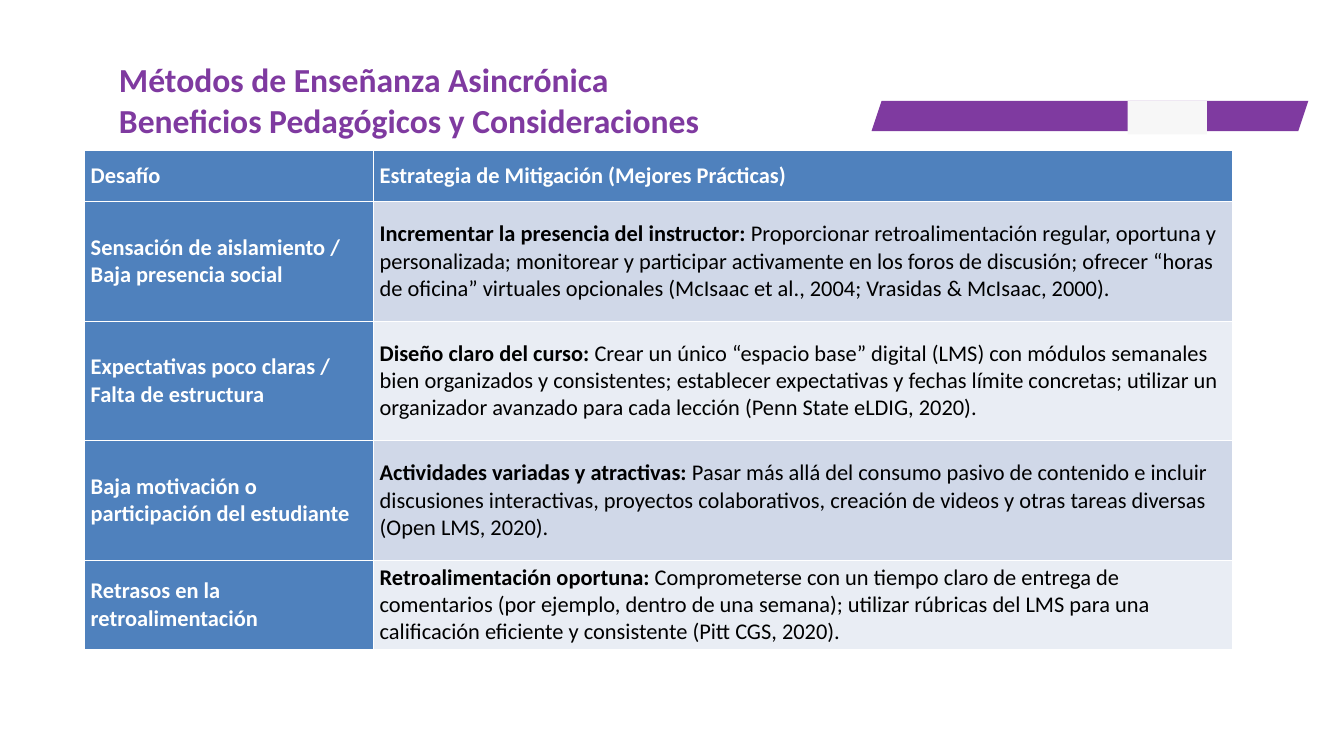
"""Build a slide with a table of asynchronous teaching challenges and mitigation strategies."""
from pptx import Presentation
from pptx.dml.color import RGBColor
from pptx.enum.shapes import MSO_SHAPE
from pptx.enum.text import MSO_ANCHOR, MSO_AUTO_SIZE, PP_ALIGN
from pptx.util import Inches, Pt

RECTANGLE = MSO_SHAPE.RECTANGLE
TOP, MIDDLE = MSO_ANCHOR.TOP, MSO_ANCHOR.MIDDLE
NO_FIT = MSO_AUTO_SIZE.NONE
LEFT = PP_ALIGN.LEFT

PURPLE = RGBColor(0x7F, 0x3A, 0xA0)
LIGHT_GRAY = RGBColor(0xF7, 0xF7, 0xF7)
BLUE = RGBColor(0x4F, 0x81, 0xBD)
BANDS = (RGBColor(0xD0, 0xD8, 0xE8), RGBColor(0xE9, 0xED, 0xF4))
WHITE = RGBColor(0xFF, 0xFF, 0xFF)
BLACK = RGBColor(0, 0, 0)
FONT = "Calibri"

TITLE = "Métodos de Enseñanza Asincrónica\vBeneficios Pedagógicos y Consideraciones"
HEADERS = ("Desafío", "Estrategia de Mitigación (Mejores Prácticas)")
CHALLENGES = [
    ("Sensación de aislamiento / Baja presencia social",
     "Incrementar la presencia del instructor:",
     " Proporcionar retroalimentación regular, oportuna y personalizada; monitorear y participar "
     "activamente en los foros de discusión; ofrecer “horas de oficina” virtuales opcionales "
     "(McIsaac et al., 2004; Vrasidas & McIsaac, 2000)."),
    ("Expectativas poco claras / Falta de estructura",
     "Diseño claro del curso:",
     " Crear un único “espacio base” digital (LMS) con módulos semanales bien organizados y "
     "consistentes; establecer expectativas y fechas límite concretas; utilizar un organizador "
     "avanzado para cada lección (Penn State eLDIG, 2020)."),
    ("Baja motivación o participación del estudiante",
     "Actividades variadas y atractivas:",
     " Pasar más allá del consumo pasivo de contenido e incluir discusiones interactivas, "
     "proyectos colaborativos, creación de videos y otras tareas diversas (Open LMS, 2020)."),
    ("Retrasos en la retroalimentación",
     "Retroalimentación oportuna:",
     " Comprometerse con un tiempo claro de entrega de comentarios (por ejemplo, dentro de una "
     "semana); utilizar rúbricas del LMS para una calificación eficiente y consistente "
     "(Pitt CGS, 2020)."),
]
COL_WIDTHS = (4.3, 12.79)
ROW_HEIGHTS = (0.76, 1.78, 1.78, 1.78, 1.27)
BAND_POINTS = [(13.12, 1.5), (19.47, 1.5), (19.32, 1.95), (12.97, 1.95)]


def set_font(font, size, color, bold=None):
    font.name, font.size, font.bold = FONT, Pt(size), bold
    font.color.rgb = color


def paint(sp, color):
    sp.shadow.inherit = False
    sp.fill.solid()
    sp.fill.fore_color.rgb = color
    sp.line.fill.background()


def fill_cell(cell, fill, color, *texts):
    cell.fill.solid()
    cell.fill.fore_color.rgb = fill
    cell.vertical_anchor = MIDDLE
    p = cell.text_frame.paragraphs[0]
    set_font(p.font, 24, color)
    for i, text in enumerate(texts):
        r = p.add_run()
        r.text = text
        r.font.bold = i == 0


def add_ribbon(s):
    points = [(Inches(x), Inches(y)) for x, y in BAND_POINTS]
    builder = s.shapes.build_freeform(*points[0])
    builder.add_line_segments(points[1:], close=True)
    paint(builder.convert_to_shape(), PURPLE)
    gap = s.shapes.add_shape(RECTANGLE, Inches(16.78), Inches(1.5), Inches(1.18), Inches(0.5))
    paint(gap, LIGHT_GRAY)


def add_title(s):
    sp = s.shapes.title
    sp.left, sp.top, sp.width, sp.height = Inches(1.67), Inches(0.83), Inches(9), Inches(1.46)
    tf = sp.text_frame
    tf.text = TITLE
    tf.word_wrap = True
    tf.auto_size = NO_FIT
    tf.vertical_anchor = TOP
    p = tf.paragraphs[0]
    p.alignment = LEFT
    set_font(p.font, 36, PURPLE, True)


def add_challenges(s):
    table = s.shapes.add_table(len(ROW_HEIGHTS), len(COL_WIDTHS), Inches(1.25), Inches(2.24),
                               Inches(sum(COL_WIDTHS)), Inches(sum(ROW_HEIGHTS))).table
    table.first_col = True
    for col, width in zip(table.columns, COL_WIDTHS):
        col.width = Inches(width)
    for row, height in zip(table.rows, ROW_HEIGHTS):
        row.height = Inches(height)
    for c, header in enumerate(HEADERS):
        fill_cell(table.cell(0, c), BLUE, WHITE, header)
    for i, (challenge, strategy, details) in enumerate(CHALLENGES):
        fill_cell(table.cell(i + 1, 0), BLUE, WHITE, challenge)
        fill_cell(table.cell(i + 1, 1), BANDS[i % 2], BLACK, strategy, details)


def main():
    prs = Presentation()
    prs.slide_width, prs.slide_height = Inches(20), Inches(11.25)
    s = prs.slides.add_slide(prs.slide_layouts[5])
    add_ribbon(s)
    add_title(s)
    add_challenges(s)
    prs.save("out.pptx")


if __name__ == "__main__":
    main()
